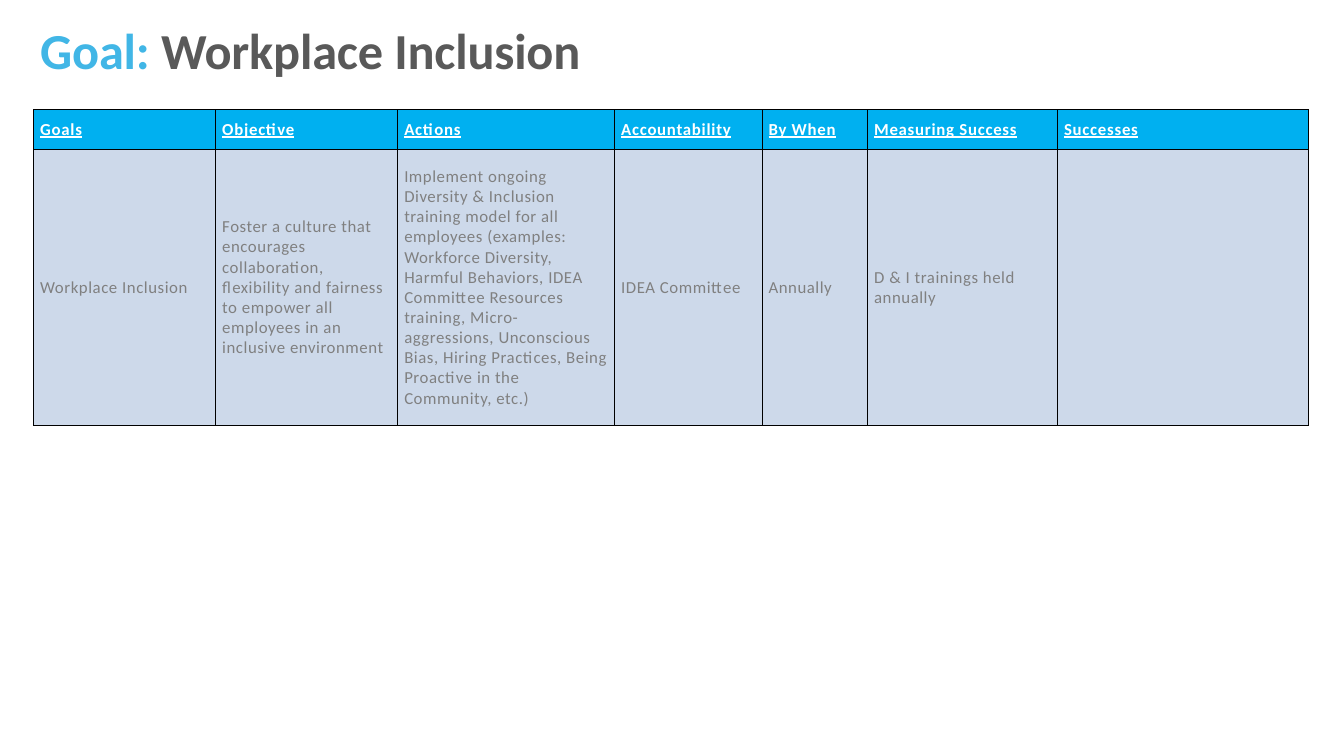
import pptx
import pptx.dml.color
import pptx.enum.text
import pptx.oxml
import pptx.oxml.ns
import pptx.util
from pptx.util import Cm, Pt

FONT = "Calibri"
BORDER = (
    '<a:{} {} w="12700"><a:solidFill><a:srgbClr val="000000"/></a:solidFill></a:{}>'
)


def rgb(value):
    return pptx.dml.color.RGBColor.from_string(value)


def add_run(p, text, size, color, spacing, bold=False, underline=False):
    """Add a run; spacing is the letter spacing in hundredths of a point."""
    r = p.add_run()
    r.text = text
    r.font.name = FONT
    r.font.size = Pt(size)
    r.font.color.rgb = rgb(color)
    r.font.bold = bold
    r.font.underline = underline
    r.font._element.set("spc", str(spacing))


prs = pptx.Presentation()
prs.slide_width, prs.slide_height = Cm(50.8), Cm(28.58)
s = prs.slides.add_slide(prs.slide_layouts[5])

# Title
title = s.shapes.title
title.left, title.top, title.width, title.height = Cm(1.52), Cm(0.71), Cm(42.9), Cm(2.79)
tf = title.text_frame
tf.margin_left = tf.margin_right = tf.margin_top = tf.margin_bottom = 0
tf.vertical_anchor = pptx.enum.text.MSO_ANCHOR.TOP
tf.auto_size = pptx.enum.text.MSO_AUTO_SIZE.SHAPE_TO_FIT_TEXT
p = tf.paragraphs[0]
p.alignment = pptx.enum.text.PP_ALIGN.LEFT
p.line_spacing = Pt(64.8)
add_run(p, "Goal: ", 54, "41B6E6", -20, bold=True)
add_run(p, "Workplace Inclusion", 54, "595959", -20, bold=True)

# Plan table: heading, column width in cm, entry
columns = [
    ("Goals", 6.88, "Workplace Inclusion"),
    ("Objective", 6.88,
     "Foster a culture that encourages collaboration, flexibility and fairness "
     "to empower all employees in an inclusive environment"),
    ("Actions", 8.2,
     "Implement ongoing Diversity & Inclusion training model for all employees "
     "(examples: Workforce Diversity, Harmful Behaviors, IDEA Committee Resources "
     "training, Micro-aggressions, Unconscious Bias, Hiring Practices, "
     "Being Proactive in the Community, etc.)"),
    ("Accountability", 5.57, "IDEA Committee"),
    ("By When", 3.99, "Annually"),
    ("Measuring Success", 7.18, "D & I trainings held annually"),
    ("Successes", 9.48, ""),
]
row_heights = [1.52, 10.43]
table = s.shapes.add_table(
    len(row_heights), len(columns), Cm(1.27), Cm(4.14), Cm(48.18), Cm(11.95)
).table
for row, height in zip(table.rows, row_heights):
    row.height = Cm(height)

for col, (heading, width, entry) in enumerate(columns):
    table.columns[col].width = Cm(width)
    for row, text in enumerate((heading, entry)):
        is_header = row == 0
        cell = table.cell(row, col)
        cell.fill.solid()
        cell.fill.fore_color.rgb = rgb("00B0F0" if is_header else "CDD9EA")
        cell.vertical_anchor = pptx.enum.text.MSO_ANCHOR.MIDDLE
        cell.margin_left = cell.margin_right = Cm(0.25)
        cell.margin_top = cell.margin_bottom = Cm(0.25)
        tcPr = cell._tc.get_or_add_tcPr()
        for i, side in enumerate(("lnL", "lnR", "lnT", "lnB")):
            xml = BORDER.format(side, pptx.oxml.ns.nsdecls("a"), side)
            tcPr.insert(i, pptx.oxml.parse_xml(xml))
        p = cell.text_frame.paragraphs[0]
        p.line_spacing = Pt(21.6)
        if is_header:
            add_run(p, text, 18, "FFFFFF", 80, bold=True, underline=True)
        elif text:
            add_run(p, text, 18, "808080", 60)

prs.save("out.pptx")
